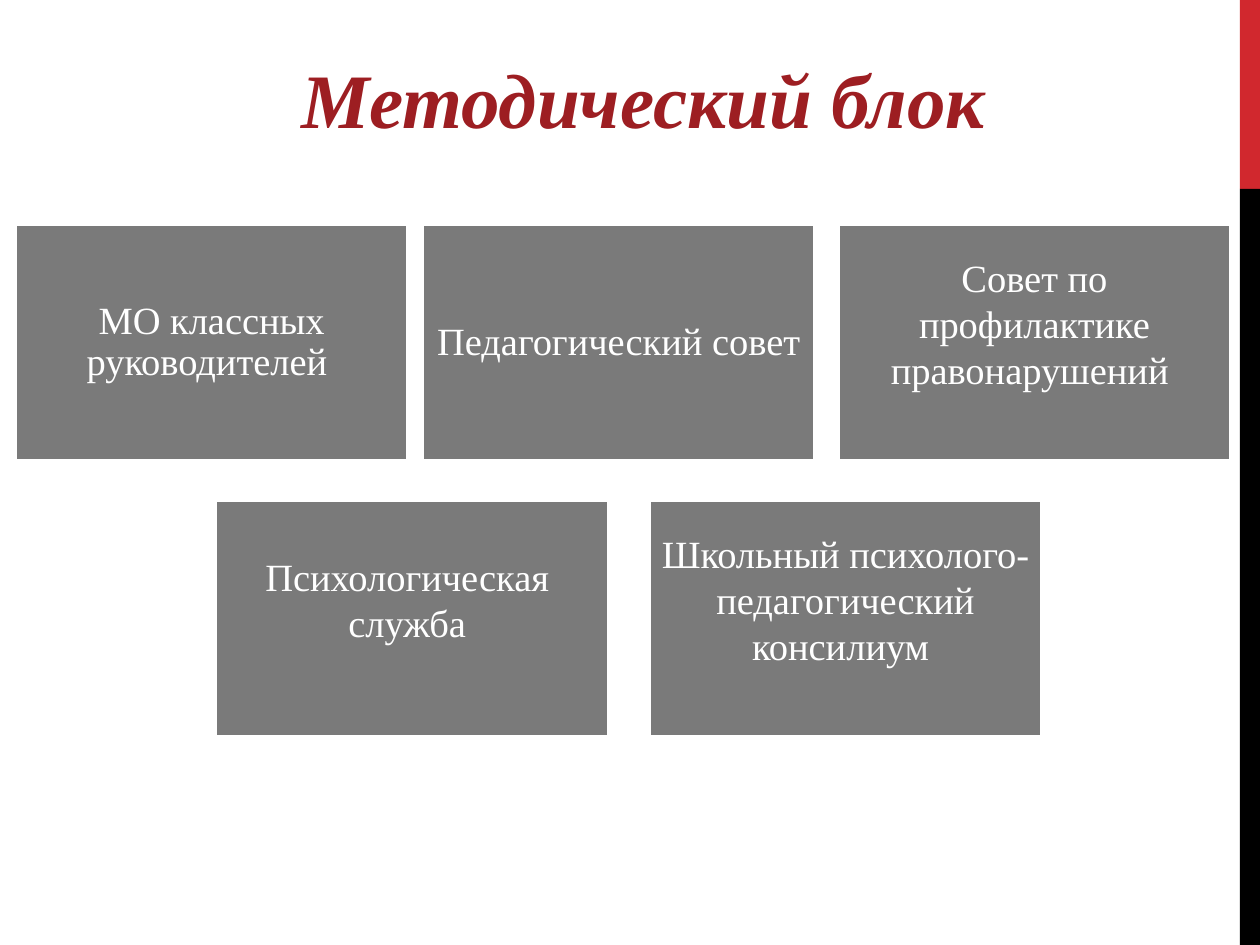
"""Build the slide of the methodical block."""
import pptx
import pptx.util
import pptx.dml.color
import pptx.enum.shapes
import pptx.enum.text

Inches = pptx.util.Inches
RGBColor = pptx.dml.color.RGBColor
RED = RGBColor(0xD1, 0x28, 0x2E)
DARK = RGBColor(0x9D, 0x1E, 0x22)
GRAY = RGBColor(0x7A, 0x7A, 0x7A)
BLACK = RGBColor(0, 0, 0)
WHITE = RGBColor(255, 255, 255)


class Page:
    font = "Times New Roman"
    size = 22
    pad = 0.09

    def __init__(self, slide):
        self.slide = slide

    def label(self, shape, text, size, color, bold=False):
        frame = shape.text_frame
        frame.word_wrap = True
        frame.text = text
        para = frame.paragraphs[0]
        para.alignment = pptx.enum.text.PP_ALIGN.CENTER
        font = para.runs[0].font
        font.name, font.size = self.font, pptx.util.Pt(size)
        font.color.rgb = color
        font.bold = font.italic = bold
        return frame

    def title(self, text, *area):
        box = self.slide.shapes.add_textbox(*map(Inches, area))
        self.label(box, text, 44, DARK, True)

    def bar(self, color, *area):
        shape = self.slide.shapes.add_shape(
            pptx.enum.shapes.MSO_SHAPE.RECTANGLE, *map(Inches, area))
        shape.shadow.inherit = False
        shape.fill.solid()
        shape.fill.fore_color.rgb = color
        shape.line.fill.background()
        return shape

    def card(self, text, area, space, lift):
        shape = self.bar(GRAY, *area)
        shape.line.color.rgb = WHITE
        shape.line.width = pptx.util.Pt(2.25)
        frame = self.label(shape, text, self.size, WHITE)
        frame.vertical_anchor = pptx.enum.text.MSO_ANCHOR.MIDDLE
        frame.margin_left = frame.margin_right = Inches(self.pad)
        frame.margin_top = Inches(self.pad)
        frame.margin_bottom = Inches(self.pad + lift)
        frame.paragraphs[0].line_spacing = space


def main():
    deck = pptx.Presentation()
    deck.slide_width, deck.slide_height = Inches(10), Inches(7.5)
    page = Page(deck.slides.add_slide(deck.slide_layouts[6]))
    page.bar(RED, 9.84, 0, 0.16, 1.5)
    page.bar(BLACK, 9.84, 1.5, 0.16, 6)
    page.title("Методический блок ", 0.98, 0.36, 8.41, 0.84)

    tight, loose = (0.9, 0), (1.0, 0.31)
    rows = (
        (1.78, (
            (0.12, "МО классных руководителей ", tight),
            (3.35, "Педагогический совет ", tight),
            (6.65, "Совет по профилактике правонарушений ", loose))),
        (3.97, (
            (1.71, "Психологическая  служба ", loose),
            (5.15, "Школьный психолого- педагогический консилиум ", loose))),
    )
    for top, cards in rows:
        for left, text, style in cards:
            page.card(text, (left, top, 3.12, 1.88), *style)
    deck.save("out.pptx")


if __name__ == "__main__":
    main()
